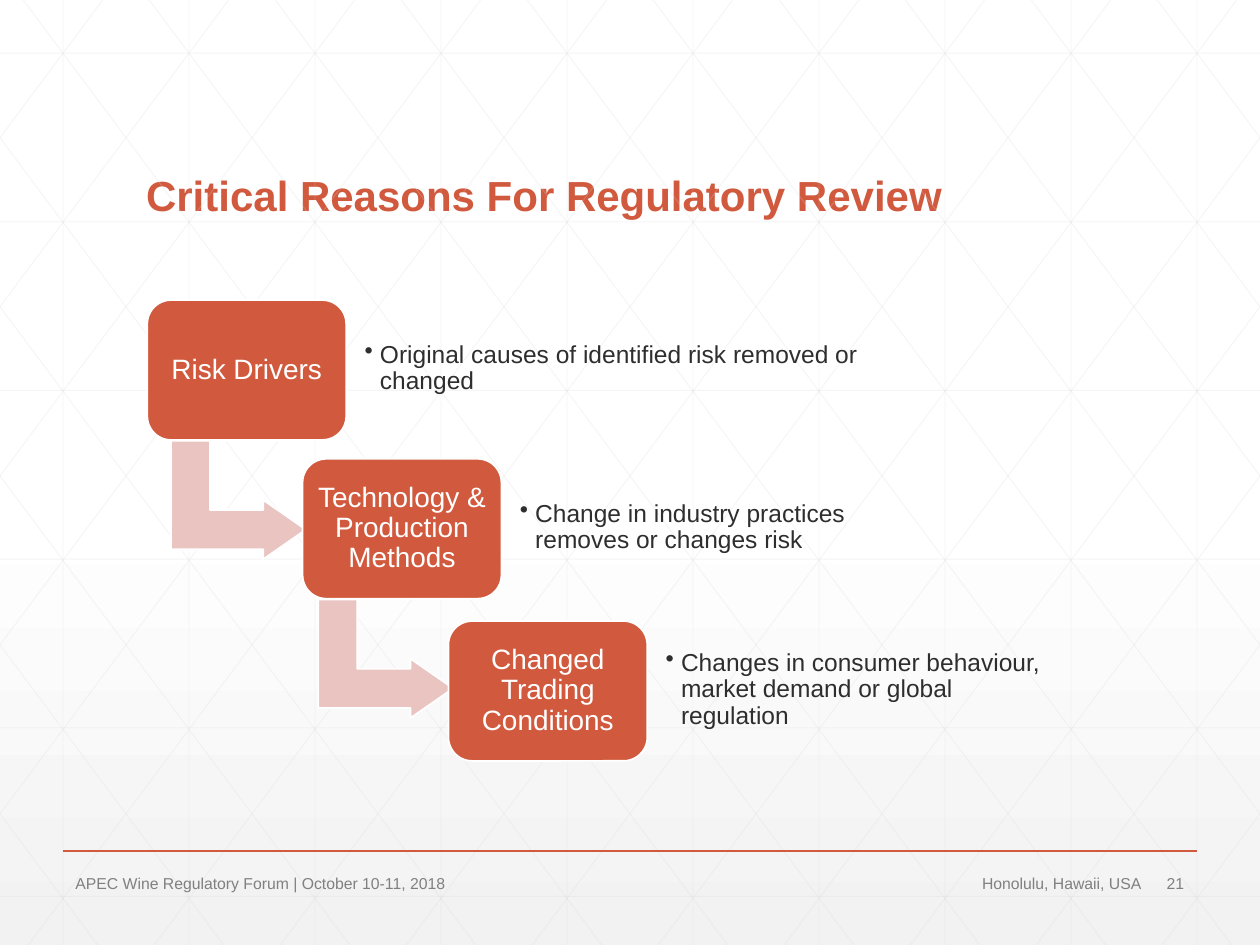
from lxml import etree
from pptx import Presentation
from pptx.dml.color import RGBColor
from pptx.enum.shapes import MSO_CONNECTOR, MSO_SHAPE
from pptx.enum.text import MSO_ANCHOR, MSO_AUTO_SIZE, PP_ALIGN
from pptx.oxml.ns import qn
from pptx.util import Cm, Pt

STRAIGHT = MSO_CONNECTOR.STRAIGHT
ROUNDED = MSO_SHAPE.ROUNDED_RECTANGLE
BENT_ARROW = MSO_SHAPE.BENT_UP_ARROW
TOP, MIDDLE, BOTTOM = MSO_ANCHOR.TOP, MSO_ANCHOR.MIDDLE, MSO_ANCHOR.BOTTOM
LEFT, CENTER, RIGHT = PP_ALIGN.LEFT, PP_ALIGN.CENTER, PP_ALIGN.RIGHT
NO_AUTOFIT = MSO_AUTO_SIZE.NONE

WIDTH, HEIGHT = 25.4, 19.05
GRID_STEP, ROW_STEP = 2.54, 3.4
DIAGONAL_RUN = 14.2
ACCENT, PALE, WHITE = "D15A3E", "E9C4C0", "FFFFFF"
GRID, MUTED, INK = "D9D9D9", "808080", "2D2E2D"

STEPS = [
    ("Risk Drivers", 2.97, 6.05, 3.61, 10.36,
     "Original causes of identified risk removed or changed"),
    ("Technology & Production Methods", 6.1, 9.25, 6.58, 7.82,
     "Change in industry practices removes or changes risk"),
    ("Changed Trading Conditions", 9.04, 12.52, None, 8.03,
     "Changes in consumer behaviour, market demand or global regulation"),
]
FOOTERS = [
    ("21", 23.27, 0.86, LEFT),
    ("APEC Wine Regulatory Forum | October 10-11, 2018", 1.27, 12.78, LEFT),
    ("Honolulu, Hawaii, USA", 14.17, 9.09, RIGHT),
]


def rgb(value):
    return RGBColor.from_string(value)


def paint_background(slide):
    fill = slide.background.fill
    fill.gradient()
    fill.gradient_angle = 270
    for stop, position, color in zip(fill.gradient_stops, (0.53, 1), (WHITE, "F2F2F2")):
        stop.position = position
        stop.color.rgb = rgb(color)


def add_line(slide, start, end, color, width, opacity=None):
    rule = slide.shapes.add_connector(STRAIGHT, *(Cm(value) for value in (*start, *end)))
    rule.line.color.rgb = rgb(color)
    rule.line.width = Pt(width)
    properties = rule._element.spPr
    if opacity:
        tint = properties.find(".//" + qn("a:srgbClr"))
        etree.SubElement(tint, qn("a:alpha"), val=str(opacity * 1000))
    etree.SubElement(properties, qn("a:effectLst"))


def add_grid(slide):
    lines = []
    for column in range(10):
        x = 1.27 + column * GRID_STEP
        lines.append(((x, 0), (x, HEIGHT)))
    for row in range(6):
        y = 1.07 + row * ROW_STEP
        lines.append(((0, y), (WIDTH, y)))
    slope = HEIGHT / DIAGONAL_RUN
    for column in range(-5, 10):
        x = 0.47 + column * GRID_STEP
        left, right = max(x, 0), min(x + DIAGONAL_RUN, WIDTH)
        top, bottom = (left - x) * slope, (right - x) * slope
        lines.append(((left, top), (right, bottom)))
        lines.append(((WIDTH - left, top), (WIDTH - right, bottom)))
    for start, end in lines:
        add_line(slide, start, end, GRID, 0.5, 25)


def write(shape, text, size, color, align=LEFT, anchor=TOP, spacing=None, margin=None):
    frame = shape.text_frame
    frame.word_wrap = True
    frame.auto_size = NO_AUTOFIT
    frame.vertical_anchor = anchor
    if margin is not None:
        frame.margin_left = frame.margin_right = Cm(margin)
        frame.margin_top = frame.margin_bottom = Cm(margin)
    frame.text = text
    paragraph = frame.paragraphs[0]
    paragraph.alignment = align
    paragraph.line_spacing = spacing
    paragraph.font.name = "Arial"
    paragraph.font.size = Pt(size)
    paragraph.font.color.rgb = rgb(color)
    return paragraph


def add_text(slide, box, *args, **style):
    return write(slide.shapes.add_textbox(*map(Cm, box)), *args, **style)


def add_block(slide, kind, box, color, adjustments):
    block = slide.shapes.add_shape(kind, *map(Cm, box))
    block.shadow.inherit = False
    block.fill.solid()
    block.fill.fore_color.rgb = rgb(color)
    block.line.color.rgb = rgb(WHITE)
    block.line.width = Pt(1)
    for index, value in enumerate(adjustments):
        block.adjustments[index] = value
    return block


def add_bullet(paragraph):
    properties = paragraph._p.get_or_add_pPr()
    properties.set("marL", str(Cm(0.31)))
    properties.set("indent", str(-Cm(0.31)))
    etree.SubElement(properties, qn("a:buChar"), char="•").getparent()
    default_font = properties.find(qn("a:defRPr"))
    properties.append(default_font)


def add_step(slide, label, left, top, arrow_left, note_width, note):
    if arrow_left is not None:
        arrow = add_block(slide, BENT_ARROW, (arrow_left, top + 2.67, 2.39, 2.72),
                          PALE, (0.33, 0.25, 0.36))
        arrow.rotation = 90
    card = add_block(slide, ROUNDED, (left, top, 4.01, 2.82), ACCENT, (0.17,))
    write(card, label, 16, WHITE, align=CENTER, anchor=MIDDLE, spacing=0.9, margin=0.17)
    reason = add_text(slide, (left + 4.22, top + 0.24, note_width, 2.29), note, 14, INK,
                      anchor=MIDDLE, spacing=0.9, margin=0.16)
    add_bullet(reason)


def add_title(slide, text):
    title = slide.shapes.title
    title.left, title.top, title.width, title.height = map(Cm, (2.69, 1.4, 20.02, 3.18))
    heading = write(title, text, 24, ACCENT, anchor=BOTTOM, spacing=0.9)
    heading.font.bold = True


def main():
    deck = Presentation()
    deck.slide_width, deck.slide_height = Cm(WIDTH), Cm(HEIGHT)
    slide = deck.slides.add_slide(deck.slide_layouts[5])
    paint_background(slide)
    add_grid(slide)
    add_line(slide, (1.27, 17.15), (24.13, 17.15), ACCENT, 1)
    add_title(slide, "Critical Reasons For Regulatory Review")
    for text, left, width, align in FOOTERS:
        add_text(slide, (left, 17.48, width, 0.61), text, 9, MUTED, align=align)
    for step in STEPS:
        add_step(slide, *step)
    deck.save("out.pptx")


if __name__ == "__main__":
    main()
